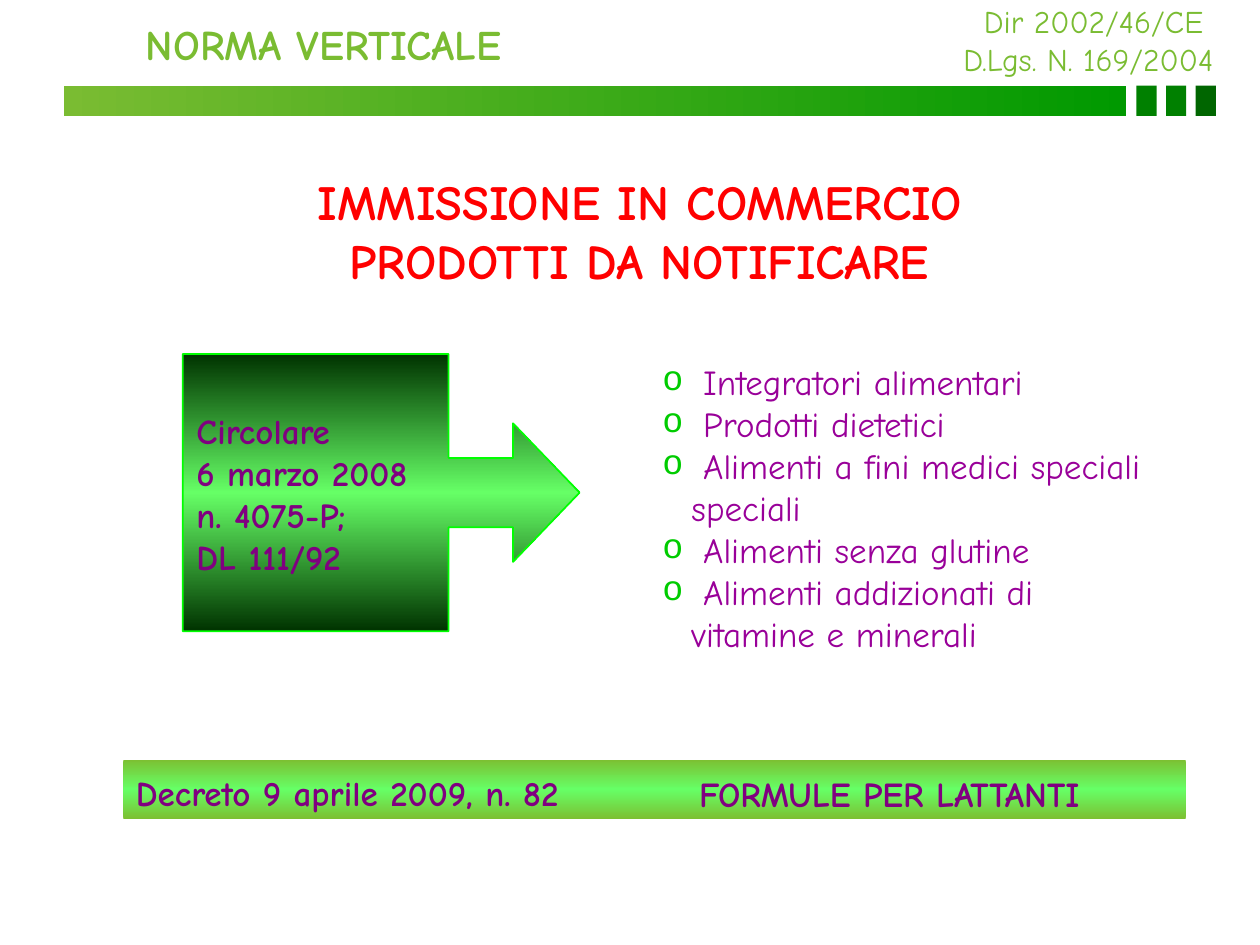
from copy import deepcopy

from pptx import Presentation
from pptx.dml.color import RGBColor
from pptx.enum.shapes import MSO_SHAPE
from pptx.enum.text import MSO_AUTO_SIZE, PP_ALIGN
from pptx.oxml.ns import qn
from pptx.util import Inches, Pt
from lxml import etree

RECTANGLE = MSO_SHAPE.RECTANGLE
CALLOUT = MSO_SHAPE.RIGHT_ARROW_CALLOUT
LEFT, CENTER = PP_ALIGN.LEFT, PP_ALIGN.CENTER
FIT_SHAPE = MSO_AUTO_SIZE.SHAPE_TO_FIT_TEXT

LIME = RGBColor(0x7A, 0xBC, 0x32)
BAND_EDGE = RGBColor(0x7C, 0xC0, 0x32)
BRIGHT = RGBColor(0x66, 0xFF, 0x66)
FOREST = RGBColor(0x00, 0x33, 0x00)
OUTLINE = RGBColor(0x00, 0xFF, 0x00)
RULE_END = RGBColor(0x00, 0x99, 0x00)
GREEN = RGBColor(0x00, 0x80, 0x00)
DARK_GREEN = RGBColor(0x00, 0x66, 0x00)
RED = RGBColor(0xFF, 0x00, 0x00)
PURPLE = RGBColor(0x80, 0x00, 0x80)
MAGENTA = RGBColor(0x99, 0x00, 0x99)
BULLET_COLOR = "00CC00"
FONT = "Comic Neue"
HANGING = 0.23

SECTION = ["NORMA VERTICALE"]
LAWS = ["Dir 2002/46/CE", "D.Lgs. N. 169/2004 "]
HEADING = ["IMMISSIONE IN COMMERCIO", "PRODOTTI DA NOTIFICARE"]
CIRCULAR = ["Circolare", "6 marzo 2008", "n. 4075-P;", "DL 111/92"]
PRODUCTS = [
    " Integratori alimentari",
    " Prodotti dietetici",
    " Alimenti a fini medici speciali speciali",
    " Alimenti senza glutine",
    " Alimenti addizionati di vitamine e minerali",
]
DECREE = ["Decreto 9 aprile 2009, n. 82"]
FORMULAS = ["FORMULE PER LATTANTI"]

RULE_TOP, RULE_HEIGHT = 0.68, 0.24
BAND_WIDTH = 8.43
SQUARE_LEFT, SQUARE_WIDTH, SQUARE_STEP = 9.02, 0.16, 0.235
SQUARE_COLORS = [GREEN, GREEN, DARK_GREEN]


def add_block(slide, kind, box, colors, angle=0):
    block = slide.shapes.add_shape(kind, *map(Inches, box))
    block.shadow.inherit = False
    block.line.fill.background()
    if len(colors) == 1:
        block.fill.solid()
        block.fill.fore_color.rgb = colors[0]
        return block
    block.fill.gradient()
    block.fill.gradient_angle = angle
    stop_list = next(block._element.spPr.iter(qn("a:gsLst")))
    while len(stop_list) < len(colors):
        stop_list.append(deepcopy(stop_list[-1]))
    for index, (stop, color) in enumerate(zip(block.fill.gradient_stops, colors)):
        stop.position = index / (len(colors) - 1)
        stop.color.rgb = color
    return block


def add_bullet(paragraph):
    properties = paragraph._p.get_or_add_pPr()
    properties.set("marL", str(Inches(HANGING)))
    properties.set("indent", str(-Inches(HANGING)))
    bullet_color = etree.SubElement(properties, qn("a:buClr"))
    etree.SubElement(bullet_color, qn("a:srgbClr"), val=BULLET_COLOR)
    etree.SubElement(properties, qn("a:buFont"), typeface="Courier New")
    etree.SubElement(properties, qn("a:buChar"), char="o")


def add_text(slide, box, lines, size, color, bold=True, align=LEFT, wrap=False, bullets=False):
    frame = slide.shapes.add_textbox(*map(Inches, box)).text_frame
    frame.word_wrap = wrap
    frame.auto_size = FIT_SHAPE
    for index, line in enumerate(lines):
        paragraph = frame.add_paragraph() if index else frame.paragraphs[0]
        paragraph.alignment = align
        if bullets:
            add_bullet(paragraph)
        run = paragraph.add_run()
        run.text = line
        run.font.name = FONT
        run.font.size = Pt(size)
        run.font.bold = bold
        run.font.color.rgb = color


def main():
    deck = Presentation()
    deck.slide_width, deck.slide_height = Inches(10), Inches(7.5)
    slide = deck.slides.add_slide(deck.slide_layouts[6])

    add_block(slide, RECTANGLE, (0.98, 6.03, BAND_WIDTH, 0.47), [BAND_EDGE, BRIGHT, BAND_EDGE], 90)
    callout = add_block(slide, CALLOUT, (1.45, 2.81, 3.15, 2.2), [FOREST, BRIGHT, FOREST], 90)
    for index, share in enumerate((0.25, 0.25, 0.24, 0.67)):
        callout.adjustments[index] = share
    callout.line.color.rgb = OUTLINE
    callout.line.width = Pt(1)

    add_block(slide, RECTANGLE, (0.51, RULE_TOP, BAND_WIDTH, RULE_HEIGHT), [LIME, RULE_END])
    for index, color in enumerate(SQUARE_COLORS):
        left = SQUARE_LEFT + index * SQUARE_STEP
        add_block(slide, RECTANGLE, (left, RULE_TOP, SQUARE_WIDTH, RULE_HEIGHT), [color])

    add_text(slide, (1.06, 0.1, 3.54, 0.5), SECTION, 24, LIME)
    add_text(slide, (7.41, -0.03, 2.54, 0.7), LAWS, 18, LIME, bold=False, align=CENTER)
    add_text(slide, (1.93, 1.31, 6.29, 1.5), HEADING, 28, RED, align=CENTER)
    add_text(slide, (1.46, 3.2, 2.44, 1.43), CIRCULAR, 20, PURPLE, wrap=True)
    add_text(slide, (5.16, 2.81, 4.17, 2.43), PRODUCTS, 20, MAGENTA,
             bold=False, wrap=True, bullets=True)
    add_text(slide, (0.98, 6.07, 5, 0.43), DECREE, 20, PURPLE, wrap=True)
    add_text(slide, (5.45, 6.08, 3.8, 0.43), FORMULAS, 20, PURPLE)

    deck.save("out.pptx")


if __name__ == "__main__":
    main()
